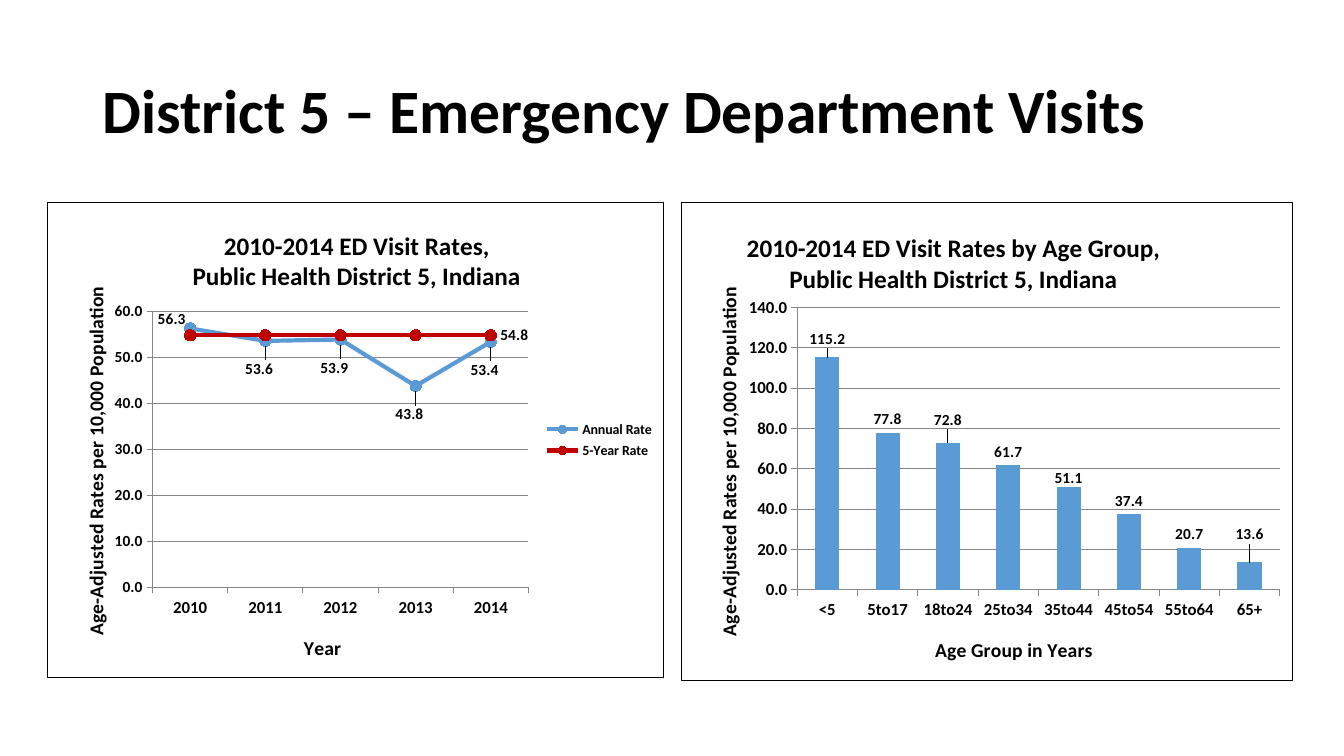
from dataclasses import dataclass, field

from lxml.etree import SubElement
from pptx import Presentation
from pptx.chart.data import CategoryChartData
from pptx.dml.color import RGBColor
from pptx.enum.chart import XL_CHART_TYPE as ChartType
from pptx.enum.chart import XL_LABEL_POSITION as LabelPos
from pptx.enum.chart import XL_LEGEND_POSITION as LegendPos
from pptx.enum.chart import XL_MARKER_STYLE as Marker
from pptx.enum.chart import XL_TICK_MARK as Tick
from pptx.enum.text import MSO_ANCHOR as Anchor
from pptx.oxml import parse_xml
from pptx.oxml.ns import nsdecls, qn
from pptx.util import Inches, Pt

FONT = "Calibri"
COLORS = {"text": "000000", "grid": "868686", "blue": "5B9BD5", "red": "C00000"}
RATE_TITLE = "Age-Adjusted Rates per 10,000 Population"


@dataclass
class Label:
    """One data label, with its shift as a fraction of the chart size."""
    point: int
    pos: LabelPos
    dx: float = 0
    dy: float = 0


@dataclass
class Series:
    name: str
    values: list[float]
    color: str
    label_pos: LabelPos | None = None
    labels: list[Label] = field(default_factory=list)


@dataclass
class Panel:
    """A chart; title and plot places are fractions of the chart size."""
    kind: ChartType
    box: tuple[float, ...]
    title: list[str]
    title_at: tuple[float, float]
    x_title: str
    x_title_at: tuple[float, float]
    y_title_at: tuple[float, float]
    y_size: int
    y_max: int
    y_step: int
    plot: tuple[float, ...]
    categories: list[str]
    series: list[Series]
    legend: tuple[float, ...] = ()


BELOW, ABOVE = LabelPos.BELOW, LabelPos.ABOVE
OUT = LabelPos.OUTSIDE_END
PANELS = [
    Panel(ChartType.LINE_MARKERS, (0.47, 2, 6.12, 4.73),
          ["2010-2014 ED Visit Rates,", "Public Health District 5, Indiana"],
          (0.23, 0.05), "Year", (0.41, 0.9), (0.05, 0.17), 11, 60, 10,
          (0.17, 0.23, 0.61, 0.58),
          [str(year) for year in range(2010, 2015)],
          [Series("Annual Rate", [56.3, 53.6, 53.9, 43.8, 53.4], "blue", BELOW,
                  [Label(0, ABOVE, -0.03, 0.02)]
                  + [Label(i, BELOW, -0.01, 0.02) for i in range(1, 5)]),
           Series("5-Year Rate", [54.8] * 5, "red", None,
                  [Label(4, LabelPos.RIGHT)])],
          (0.8, 0.45, 0.19, 0.1)),
    Panel(ChartType.COLUMN_CLUSTERED, (6.75, 2, 6.07, 4.76),
          ["2010-2014 ED Visit Rates by Age Group, Public Health District 5, Indiana"],
          (0.1, 0.05), "Age Group in Years", (0.41, 0.9), (0.05, 0.17), 12, 140, 20,
          (0.19, 0.22, 0.79, 0.59),
          ["<5", "5to17", "18to24", "25to34", "35to44", "45to54", "55to64", "65+"],
          [Series("Series 1", [115.2, 77.8, 72.8, 61.7, 51.1, 37.4, 20.7, 13.6],
                  "blue", OUT,
                  [Label(0, OUT, 0, -0.01), Label(2, OUT, 0, -0.02),
                   Label(4, OUT, 0, 0.01), Label(7, OUT, 0, -0.03)])]),
]


def rgb(name: str) -> RGBColor:
    return RGBColor.from_string(COLORS[name])


def style(font, size: float, bold: bool = True) -> None:
    font.name, font.size, font.bold = FONT, Pt(size), bold
    font.color.rgb = rgb("text")


def write(tf, *lines: str, size: float, bold: bool = True, spacing: float | None = None) -> None:
    for i, line in enumerate(lines):
        p = tf.add_paragraph() if i else tf.paragraphs[0]
        if spacing:
            p.line_spacing = spacing
        r = p.add_run()
        r.text = line
        style(r.font, size, bold)


def layout(parent, after: str, *place: float, inner: bool = False, edge: bool = True) -> None:
    """Place a chart part by hand, right after the named child."""
    for old in parent.findall(qn("c:layout")):
        parent.remove(old)
    element = parse_xml(f"<c:layout {nsdecls('c')}><c:manualLayout/></c:layout>")
    manual = element[0]
    if inner:
        SubElement(manual, qn("c:layoutTarget")).set("val", "inner")
    if edge:
        for tag in ("c:xMode", "c:yMode"):
            SubElement(manual, qn(tag)).set("val", "edge")
    for tag, value in zip(("c:x", "c:y", "c:w", "c:h"), place):
        SubElement(manual, qn(tag)).set("val", str(value))
    anchor = parent.find(qn(after)) if after else None
    if anchor is None:
        parent.insert(0, element)
    else:
        anchor.addnext(element)


def add_title(owner, at: tuple[float, float], *lines: str, size: float) -> None:
    title = owner.chart_title if hasattr(owner, "chart_title") else owner.axis_title
    write(title.text_frame, *lines, size=size)
    layout(title._element, "c:tx", *at)


def add_border(chart) -> None:
    border = parse_xml(
        f'<c:spPr {nsdecls("c", "a")}><a:noFill/><a:ln w="{Pt(0.75)}"><a:solidFill>'
        f'<a:srgbClr val="{COLORS["text"]}"/></a:solidFill></a:ln></c:spPr>')
    chart._chartSpace.find(qn("c:chart")).addnext(border)


def format_series(s, data: Series, is_line: bool) -> None:
    color = rgb(data.color)
    if is_line:
        s.smooth = False
        s.format.line.color.rgb, s.format.line.width = color, Pt(3)
        s.marker.style, s.marker.size = Marker.CIRCLE, 8
        for part in (s.marker.format.fill, s.marker.format.line.fill):
            part.solid()
            part.fore_color.rgb = color
    else:
        s.format.fill.solid()
        s.format.fill.fore_color.rgb = color
    if data.label_pos is not None:
        labels = s.data_labels
        labels.show_value, labels.position = True, data.label_pos
        labels.number_format, labels.number_format_is_linked = "0.0", False
        style(labels.font, 11)
    for item in data.labels:
        label = s.points[item.point].data_label
        style(label.font, 11)
        label.position = item.pos
        if item.dx or item.dy:
            dlbl = s._element.xpath(f"c:dLbls/c:dLbl[c:idx/@val='{item.point}']")[0]
            layout(dlbl, "c:idx", item.dx, item.dy, edge=False)


def add_panel(slide, panel: Panel) -> None:
    data = CategoryChartData(number_format="0.0")
    data.categories = panel.categories
    for series in panel.series:
        data.add_series(series.name, series.values)
    chart = slide.shapes.add_chart(panel.kind, *map(Inches, panel.box), data).chart
    style(chart.font, 10, bold=False)
    add_border(chart)
    add_title(chart, panel.title_at, *panel.title, size=18)

    # Axes
    x, y = chart.category_axis, chart.value_axis
    add_title(x, panel.x_title_at, panel.x_title, size=14)
    add_title(y, panel.y_title_at, RATE_TITLE, size=14)
    for axis, size in ((x, 12), (y, panel.y_size)):
        style(axis.tick_labels.font, size)
        axis.major_tick_mark, axis.minor_tick_mark = Tick.OUTSIDE, Tick.NONE
        axis.format.line.color.rgb = rgb("grid")
    y.minimum_scale, y.maximum_scale, y.major_unit = 0, panel.y_max, panel.y_step
    y.tick_labels.number_format, y.tick_labels.number_format_is_linked = "0.0", False
    y.major_gridlines.format.line.color.rgb = rgb("grid")

    # Plot and legend
    plot = chart.plots[0]
    plot.vary_by_categories = False
    is_line = panel.kind == ChartType.LINE_MARKERS
    if not is_line:
        plot.gap_width = 150
    layout(chart._chartSpace.chart.plotArea, "", *panel.plot, inner=True)
    for s, series in zip(plot.series, panel.series):
        format_series(s, series, is_line)
    chart.has_legend = bool(panel.legend)
    if panel.legend:
        chart.legend.position = LegendPos.RIGHT
        chart.legend.include_in_layout = False
        style(chart.legend.font, 10)
        layout(chart.legend._element, "c:legendPos", *panel.legend)


def main() -> None:
    prs = Presentation()
    prs.slide_width, prs.slide_height = Inches(13.33), Inches(7.5)
    slide = prs.slides.add_slide(prs.slide_layouts[6])

    # Slide title
    tf = slide.shapes.add_textbox(*map(Inches, (0.92, 0.4, 11.5, 1.45))).text_frame
    tf.word_wrap, tf.vertical_anchor = True, Anchor.MIDDLE
    write(tf, "District 5 – Emergency Department Visits", size=44, spacing=0.9)

    # Charts
    for panel in PANELS:
        add_panel(slide, panel)
    prs.save("out.pptx")


if __name__ == "__main__":
    main()
